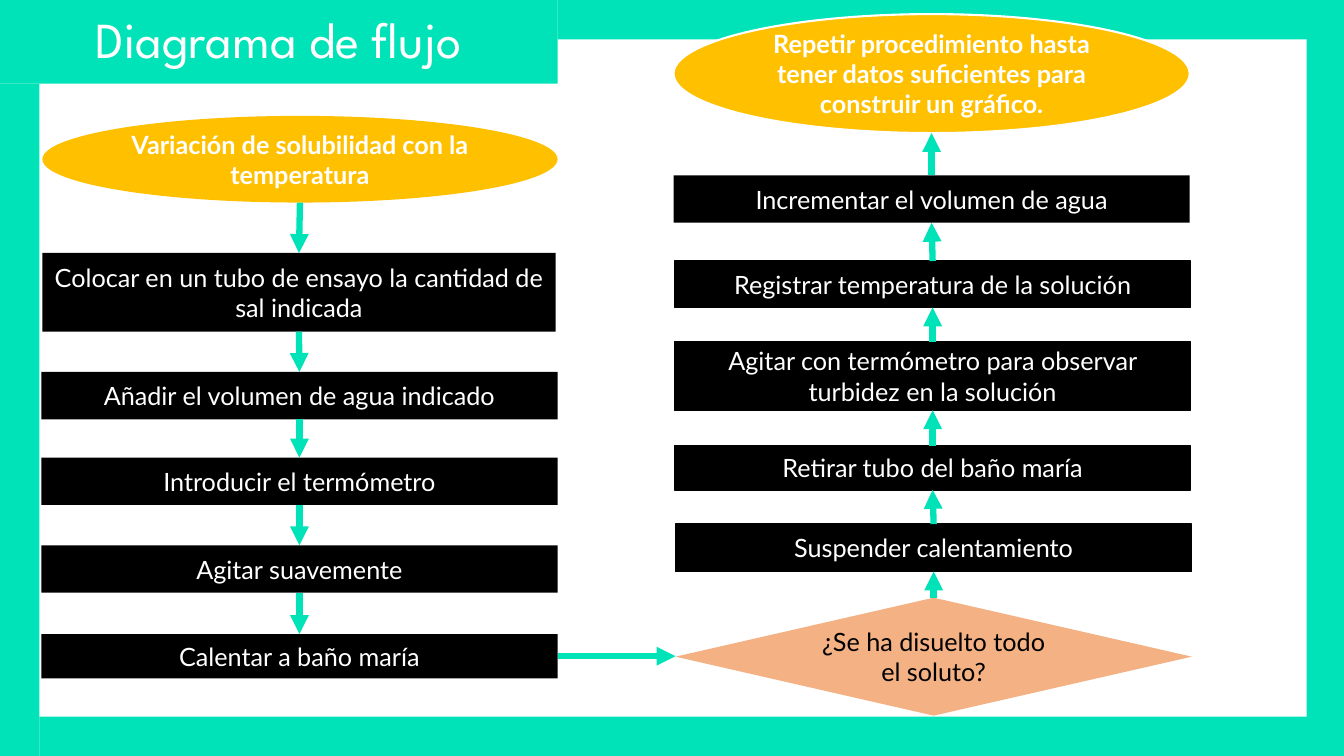
from lxml import etree
from pptx import Presentation, util as u
from pptx.dml.color import RGBColor
from pptx.enum import shapes, text
from pptx.oxml import ns

# Grid: square cells, 75 rows to the slide's height
CELL = u.Inches(0.1)
COLS, ROWS = 133.3, 75
FRAME = 3.9
TITLE_W, TITLE_H = 55.3, 8.3
STEP_W = 51.2

TEAL, AMBER, PEACH = "00E2B7", "FFC000", "F4B183"
BLACK, WHITE = "000000", "FFFFFF"

RECT = shapes.MSO_SHAPE.RECTANGLE
OVAL = shapes.MSO_SHAPE.OVAL
DECISION = shapes.MSO_SHAPE.FLOWCHART_DECISION

STEP_FONT = {"name": "Lato", "size": u.Pt(18), "bold": False}
TITLE_FONT = {"name": "League Spartan", "size": u.Pt(36), "bold": False}

# Kind of step: outline, fill, text colour, bold
KINDS = {
    "step": (RECT, BLACK, WHITE, False),
    "end": (OVAL, AMBER, WHITE, True),
    "question": (DECISION, PEACH, BLACK, False),
}

# Each step: kind, wording, left, top, width, height, outline (colour, points)
DOWN = [
    ("end", "Variación de solubilidad con la temperatura", 4.2, 11.5, 51.1, 8.6, None),
    ("step", "Colocar en un tubo de ensayo la cantidad de sal indicada",
     4.2, 25.1, 50.9, 7.8, None),
    ("step", "Añadir el volumen de agua indicado", 4.1, 36.9, STEP_W, 4.7, None),
    ("step", "Introducir el termómetro", 4.1, 45.4, STEP_W, 4.7, None),
    ("step", "Agitar suavemente", 4.1, 54.1, STEP_W, 4.7, None),
    ("step", "Calentar a baño maría", 4.1, 62.9, STEP_W, 4.4, None),
]
UP = [
    ("question", "¿Se ha disuelto todo el soluto?", 67, 59.3, STEP_W, 11.7, None),
    ("step", "Suspender calentamiento", 67, 52, STEP_W, 4.7, (BLACK, 1)),
    ("step", "Retirar tubo del baño maría", 66.9, 44.2, STEP_W, 4.4, (BLACK, 1)),
    ("step", "Agitar con termómetro para observar turbidez en la solución",
     66.9, 33.9, STEP_W, 6.8, (BLACK, 1)),
    ("step", "Registrar temperatura de la solución",
     66.9, 25.9, STEP_W, 4.6, (BLACK, 1)),
    ("step", "Incrementar el volumen de agua", 66.8, 17.4, STEP_W, 4.7, None),
    ("end", "Repetir procedimiento hasta tener datos suficientes para construir un gráfico.",
     66.8, 1.4, STEP_W, 11.8, (WHITE, 1.5)),
]


def grid(*cells):
    return [round(cell * CELL) for cell in cells]


def paint(target, colour):
    """Give a fill a solid colour from a hex string."""
    target.solid()
    target.fore_color.rgb = RGBColor.from_string(colour)


def write(shape, words, colour, font_format):
    frame = shape.text_frame
    frame.word_wrap = True
    frame.vertical_anchor = text.MSO_ANCHOR.MIDDLE
    frame.text = words
    paragraph = frame.paragraphs[0]
    paragraph.alignment = text.PP_ALIGN.CENTER
    font = paragraph.runs[0].font
    for attribute, value in font_format.items():
        setattr(font, attribute, value)
    paint(font.fill, colour)
    return paragraph


def add_block(slide, outline, colour, box, border=None):
    block = slide.shapes.add_shape(outline, *grid(*box))
    block.shadow.inherit = False
    paint(block.fill, colour)
    if border:
        border_colour, points = border
        paint(block.line.fill, border_colour)
        block.line.width = u.Pt(points)
    else:
        block.line.fill.background()
    return block


def add_step(slide, kind, words, left, top, width, height, border):
    outline, fill, ink, bold = KINDS[kind]
    step = add_block(slide, outline, fill, (left, top, width, height), border)
    write(step, words, ink, {**STEP_FONT, "bold": bold})
    return step


def add_arrow(slide, start, end):
    arrow = slide.shapes.add_connector(shapes.MSO_CONNECTOR.STRAIGHT, *start, *end)
    paint(arrow.line.fill, TEAL)
    arrow.line.width = u.Pt(4.5)
    etree.SubElement(arrow.line._get_or_add_ln(), ns.qn("a:tailEnd"), type="triangle")
    etree.SubElement(arrow._element.spPr, ns.qn("a:effectLst"))


def top_of(step):
    return step.left + step.width // 2, step.top


def bottom_of(step):
    return step.left + step.width // 2, step.top + step.height


def add_chain(slide, steps, leave, enter):
    """Draw one column of steps and the arrows from each to the next."""
    chain = [add_step(slide, *step) for step in steps]
    for before, after in zip(chain, chain[1:]):
        add_arrow(slide, leave(before), enter(after))
    return chain


def add_title(slide, words):
    title = slide.shapes.title
    title.left, title.top, title.width, title.height = grid(0, 0, TITLE_W, TITLE_H)
    paint(title.fill, TEAL)
    write(title, words, WHITE, TITLE_FONT).line_spacing = 0.9


def add_frame(slide):
    right, bottom = COLS - FRAME, ROWS - FRAME
    for box in (
        (0, TITLE_H, FRAME, ROWS - TITLE_H),
        (right + 0.2, 0, FRAME - 0.2, ROWS),
        (TITLE_W, 0, COLS - TITLE_W, FRAME),
        (FRAME, bottom, COLS - FRAME, FRAME),
    ):
        add_block(slide, RECT, TEAL, box)


def main():
    deck = Presentation()
    deck.slide_width, deck.slide_height = grid(COLS, ROWS)
    slide = deck.slides.add_slide(deck.slide_layouts[5])
    paint(slide.background.fill, WHITE)

    # Title and border
    add_title(slide, "Diagrama de flujo")
    add_frame(slide)

    # Left column runs down, right column runs up
    heating = add_chain(slide, DOWN, bottom_of, top_of)[-1]
    question = add_chain(slide, UP, top_of, bottom_of)[0]

    # Crossing from the left column to the right one
    level = heating.top + heating.height // 2
    add_arrow(slide, (heating.left + heating.width, level), (question.left, level))

    deck.save("out.pptx")


if __name__ == "__main__":
    main()
